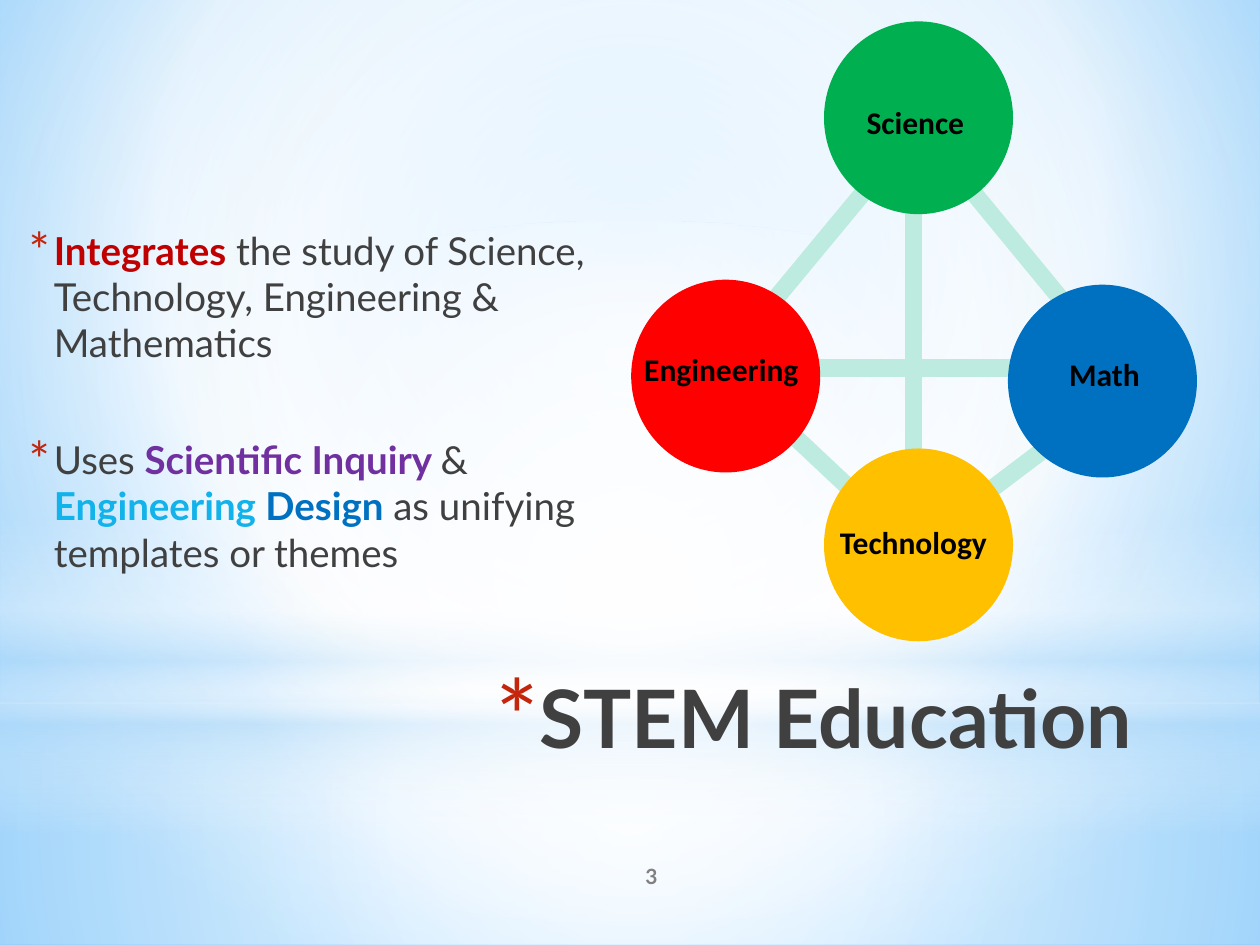
from typing import NamedTuple

from lxml.etree import SubElement
from pptx import Presentation
from pptx.dml.color import RGBColor
from pptx.enum.shapes import MSO_CONNECTOR as Connector, MSO_SHAPE as Shape
from pptx.enum.text import MSO_ANCHOR as Anchor, PP_ALIGN as Align
from pptx.oxml import parse_xml
from pptx.oxml.ns import nsdecls, qn
from pptx.util import Inches, Pt

GREY = "404040"
CENTRE = (50, 50, 50, 50)


class Stop(NamedTuple):
    position: int
    color: str
    opacity: int = 100


class Span(NamedTuple):
    text: str
    color: str = GREY
    bold: bool = False


class Paragraph(NamedTuple):
    spans: list[Span]
    space_before: float = 0


class Glow(NamedTuple):
    kind: Shape
    top: float
    height: float
    stops: list[Stop]
    focus: tuple | None = CENTRE


class Subject(NamedTuple):
    name: str
    color: str
    left: float
    top: float
    label_left: float
    label_top: float
    label_width: float


class Link(NamedTuple):
    x1: float
    y1: float
    x2: float
    y2: float


GLOWS = [
    Glow(Shape.RECTANGLE, 5.58, 1.92,
         [Stop(0, "FFFFFF", 91), Stop(37, "FFFFFF", 76), Stop(100, "B4DCFA", 79)]),
    Glow(Shape.RECTANGLE, 0, 5.58,
         [Stop(0, "FFFFFF", 89), Stop(48, "FFFFFF", 62), Stop(100, "B4DCFA", 79)]),
    Glow(Shape.RECTANGLE, 4.12, 2.5,
         [Stop(0, "FFFFFF", 0), Stop(29, "FFFFFF", 30), Stop(45, "B4DCFA", 40),
          Stop(55, "FFFFFF", 26), Stop(65, "B4DCFA", 60), Stop(100, "FFFFFF", 0)], None),
    Glow(Shape.OVAL, 1.75, 5.58, [Stop(0, "FFFFFF"), Stop(56, "FFFFFF", 0)]),
]
LINKS = [
    Link(7.25, 3.84, 7.25, 1.42),
    Link(5.79, 2.98, 7.29, 4.39),
    Link(7.29, 1, 8.92, 2.98),
    Link(5.65, 2.98, 7.29, 1),
    Link(8.85, 3.14, 7.29, 4.32),
    Link(5.99, 2.92, 8.51, 2.92),
]
SUBJECTS = [
    Subject("Engineering", "FF0000", 5.01, 2.22, 4.84, 2.73, 1.77),
    Subject("Science", "00B050", 6.54, 0.17, 6.62, 0.77, 1.29),
    Subject("Math", "0070C0", 8, 2.26, 8.12, 2.77, 1.29),
    Subject("Technology", "FFC000", 6.54, 3.56, 6.4, 4.1, 1.7),
]
POINTS = [
    Paragraph([
        Span("Integrates", "C00000", True),
        Span(" the study of Science, Technology, Engineering & Mathematics"),
    ], 4.4),
    Paragraph([
        Span("Uses "),
        Span("Scientific Inquiry ", "7030A0", True),
        Span("& "),
        Span("Engineering", "12B2EB", True),
        Span(" Design", "0070C0", True),
        Span(" as unifying templates or themes"),
    ], 37.6),
]


def rgb(value: str) -> RGBColor:
    return RGBColor.from_string(value)


def set_gradient(fill, element, stops: list[Stop], focus: tuple | None) -> None:
    fill.solid()
    stop_xml = "".join(
        f'<a:gs pos="{stop.position * 1000}"><a:srgbClr val="{stop.color}">'
        f'<a:alpha val="{stop.opacity * 1000}"/></a:srgbClr></a:gs>'
        for stop in stops)
    direction = '<a:lin ang="5400000" scaled="0"/>'
    if focus:
        sides = " ".join(f'{side}="{value * 1000}"' for side, value in zip("ltrb", focus))
        direction = f'<a:path path="circle"><a:fillToRect {sides}/></a:path>'
    solid = element.find(".//" + qn("a:solidFill"))
    solid.getparent().replace(solid, parse_xml(
        f'<a:gradFill {nsdecls("a")} rotWithShape="1">'
        f'<a:gsLst>{stop_xml}</a:gsLst>{direction}</a:gradFill>'))


def set_bullet(para, indent: float, hanging: float, scale: int) -> None:
    properties = para._p.get_or_add_pPr()
    properties.set("marL", str(Inches(indent)))
    properties.set("indent", str(-Inches(hanging)))
    color = SubElement(properties, qn("a:buClr"))
    SubElement(color, qn("a:srgbClr"), val="C3260C")
    SubElement(properties, qn("a:buSzPct"), val=str(scale * 1000))
    SubElement(properties, qn("a:buFont"), typeface="Lato")
    SubElement(properties, qn("a:buChar"), char="*")


def add_text(page, paragraphs: list[Paragraph], left: float, top: float, width: float,
             height: float, *, size: float, font: str = "Lato", align=Align.LEFT,
             anchor=Anchor.TOP, bullet: tuple | None = None) -> None:
    box = page.shapes.add_textbox(Inches(left), Inches(top), Inches(width), Inches(height))
    frame = box.text_frame
    frame.word_wrap = True
    frame.vertical_anchor = anchor
    for index, paragraph in enumerate(paragraphs):
        para = frame.add_paragraph() if index else frame.paragraphs[0]
        para.alignment = align
        para.space_before = Pt(paragraph.space_before)
        para.space_after = Pt(3 if len(paragraphs) > 1 else 0)
        if bullet:
            set_bullet(para, *bullet)
        for span in paragraph.spans:
            run = para.add_run()
            run.text = span.text
            run.font.name = font
            run.font.size = Pt(size)
            run.font.bold = span.bold
            run.font.color.rgb = rgb(span.color)


def add_plain_shape(page, kind: Shape, left: float, top: float, width: float, height: float):
    shape = page.shapes.add_shape(
        kind, Inches(left), Inches(top), Inches(width), Inches(height))
    shape.shadow.inherit = False
    shape.line.fill.background()
    return shape


def add_glow(page, glow: Glow) -> None:
    shape = add_plain_shape(page, glow.kind, 0, glow.top, 10, glow.height)
    set_gradient(shape.fill, shape.element.spPr, glow.stops, glow.focus)


def add_link(page, link: Link) -> None:
    line = page.shapes.add_connector(Connector.STRAIGHT, *(Inches(value) for value in link))
    line.line.color.rgb = rgb("BEEBDF")
    line.line.width = Pt(10)
    SubElement(line.element.spPr, qn("a:effectLst"))


def add_circle(page, subject: Subject) -> None:
    circle = add_plain_shape(page, Shape.OVAL, subject.left, subject.top, 1.5, 1.53)
    circle.fill.solid()
    circle.fill.fore_color.rgb = rgb(subject.color)


def main() -> None:
    deck = Presentation()
    deck.slide_width, deck.slide_height = Inches(10), Inches(7.5)
    page = deck.slides.add_slide(deck.slide_layouts[6])
    set_gradient(page.background.fill, page.element,
                 [Stop(0, "9ED5FF"), Stop(60, "FFFFFF"), Stop(100, "5BB9FF")],
                 (20, 10, 20, 60))
    for glow in GLOWS:
        add_glow(page, glow)
    add_text(page, [Paragraph([Span("3", "808080", True)])], 4.17, 6.75, 2, 0.4,
             size=12, align=Align.CENTER, anchor=Anchor.MIDDLE)
    add_text(page, [Paragraph([Span("STEM Education", GREY, True)])], 1.96, 5.25, 7.12, 1.17,
             size=46, align=Align.RIGHT, bullet=(0.35, 0.35, 128))
    add_text(page, POINTS, 0.08, 1.75, 5.17, 5.15, size=22, bullet=(0.25, 0.2, 130))
    for link in LINKS:
        add_link(page, link)
    for subject in SUBJECTS:
        add_circle(page, subject)
    for subject in SUBJECTS:
        add_text(page, [Paragraph([Span(subject.name, "000000", True)])],
                 subject.label_left, subject.label_top, subject.label_width, 0.4,
                 size=18, font="Calibri", align=Align.CENTER)
    deck.save("out.pptx")


if __name__ == "__main__":
    main()
